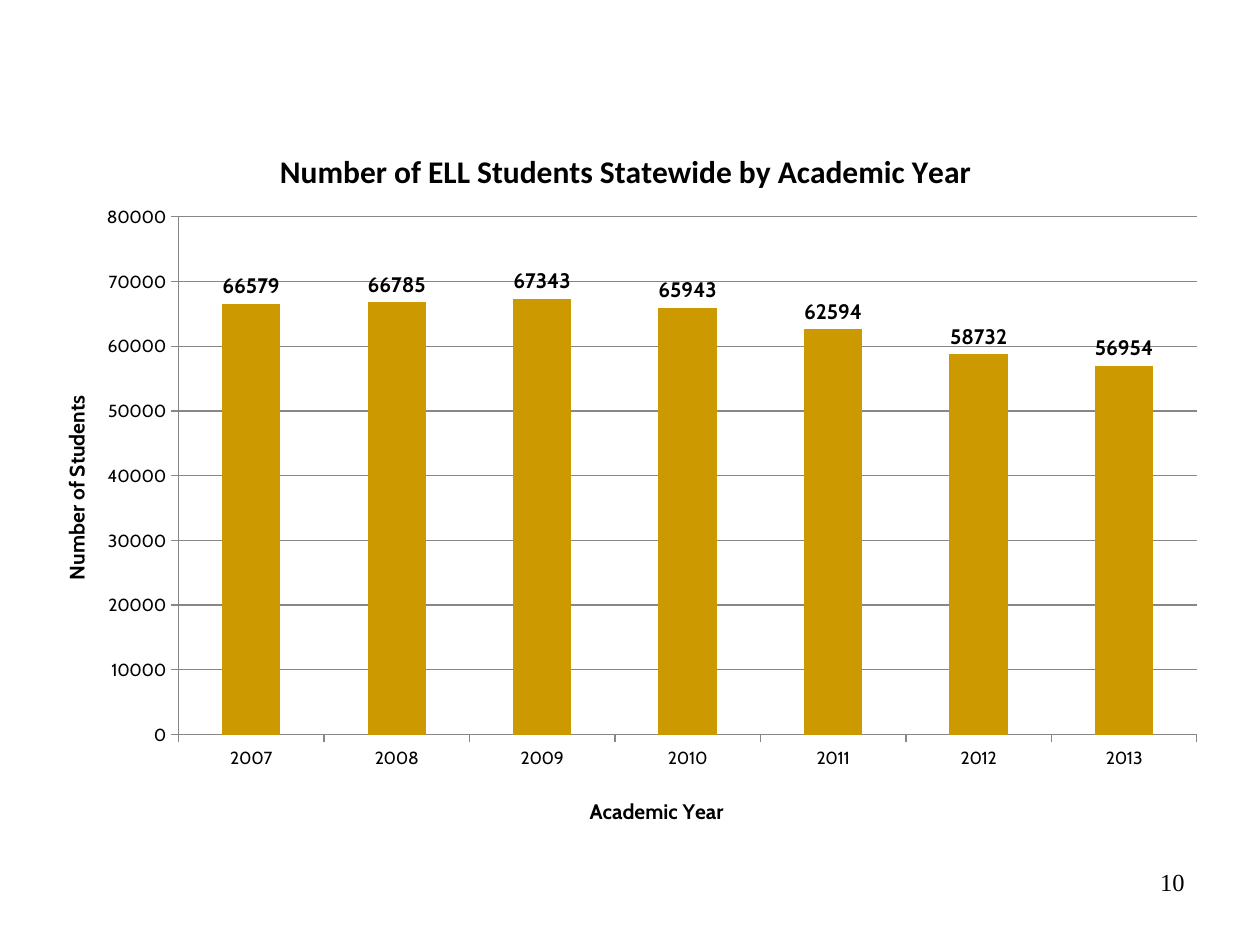
from dataclasses import dataclass

from lxml import etree
from pptx import Presentation, util as u
from pptx.chart.data import CategoryChartData
from pptx.dml.color import RGBColor
from pptx.enum import chart as ch, text
from pptx.oxml import ns

COLORS = {"text": "000000", "bar": "CC9900", "line": "878787"}
FONT = "Cabin"
WIDTH, HEIGHT = 10, 7.5
STUDENTS = {
    "2007": 66579, "2008": 66785, "2009": 67343, "2010": 65943,
    "2011": 62594, "2012": 58732, "2013": 56954,
}


@dataclass(frozen=True)
class Caption:
    """A chart or axis title; x and y are shares of the chart's size."""
    words: str
    size: float
    font: str
    x: float
    y: float


TITLE = Caption("Number of ELL Students Statewide by Academic Year", 18, "Calibri", 0.21, 0.04)
YEAR_TITLE = Caption("Academic Year", 12, FONT, 0.47, 0.93)
COUNT_TITLE = Caption("Number of Students", 12, FONT, 0.03, 0.38)


def rgb(name: str) -> RGBColor:
    return RGBColor.from_string(COLORS[name])


def style_font(font, size: float, name: str = FONT, bold: bool = False) -> None:
    font.size, font.name, font.bold = u.Pt(size), name, bold
    font.color.rgb = rgb("text")


def style_line(line) -> None:
    line.color.rgb = rgb("line")
    line.width = u.Pt(0.75)


def make_layout(**values) -> etree._Element:
    """Return a manual c:layout with the given settings."""
    layout = etree.Element(ns.qn("c:layout"))
    manual = etree.SubElement(layout, ns.qn("c:manualLayout"))
    for tag, value in values.items():
        etree.SubElement(manual, ns.qn(f"c:{tag}")).set("val", str(value))
    return layout


def add_caption(owner, caption: Caption) -> None:
    """Write and place the title of a chart or an axis."""
    owner.has_title = True
    title = owner.chart_title if hasattr(owner, "chart_title") else owner.axis_title
    r = title.text_frame.paragraphs[0].add_run()
    r.text = caption.words
    style_font(r.font, caption.size, caption.font, bold=True)
    el = title._element
    for old in el.findall(ns.qn("c:layout")):
        el.remove(old)
    el.find(ns.qn("c:tx")).addnext(
        make_layout(xMode="edge", yMode="edge", x=caption.x, y=caption.y))


def style_axis(axis, caption: Caption) -> None:
    axis.major_tick_mark = ch.XL_TICK_MARK.OUTSIDE
    axis.minor_tick_mark = ch.XL_TICK_MARK.NONE
    style_font(axis.tick_labels.font, 10)
    style_line(axis.format.line)
    add_caption(axis, caption)


def add_student_chart(s) -> None:
    data = CategoryChartData()
    data.categories = list(STUDENTS)
    data.add_series("Series 1", list(STUDENTS.values()))
    chart = s.shapes.add_chart(
        ch.XL_CHART_TYPE.COLUMN_CLUSTERED, u.Inches(0.18), u.Inches(0.91),
        u.Inches(9.51), u.Inches(5.79), data).chart
    chart.has_legend = False
    style_font(chart.font, 10)
    add_caption(chart, TITLE)

    style_axis(chart.category_axis, YEAR_TITLE)
    values = chart.value_axis
    style_axis(values, COUNT_TITLE)
    values.minimum_scale, values.maximum_scale, values.major_unit = 0, 80000, 10000
    values.has_major_gridlines = True
    style_line(values.major_gridlines.format.line)

    plot = chart.plots[0]
    plot.gap_width = 150
    plot.vary_by_categories = False
    bars = plot.series[0]
    bars.format.fill.solid()
    bars.format.fill.fore_color.rgb = rgb("bar")
    labels = bars.data_labels
    labels.show_value = True
    labels.position = ch.XL_LABEL_POSITION.OUTSIDE_END
    style_font(labels.font, 12, bold=True)

    area = chart._chartSpace.chart.plotArea
    for old in area.findall(ns.qn("c:layout")):
        area.remove(old)
    area.insert(0, make_layout(layoutTarget="inner", xMode="edge", yMode="edge",
                               x=0.13, y=0.14, w=0.85, h=0.71))


def add_page_number(s, number: str) -> None:
    box = s.shapes.add_textbox(u.Inches(7.17), u.Inches(6.83), u.Inches(2.33), u.Inches(0.52))
    tf = box.text_frame
    tf.word_wrap = True
    p = tf.paragraphs[0]
    p.alignment = text.PP_ALIGN.RIGHT
    r = p.add_run()
    r.text = number
    style_font(r.font, 14, "Times New Roman")


def main() -> None:
    prs = Presentation()
    prs.slide_width, prs.slide_height = u.Inches(WIDTH), u.Inches(HEIGHT)
    s = prs.slides.add_slide(prs.slide_layouts.get_by_name("Blank"))
    add_student_chart(s)
    add_page_number(s, "10")
    prs.save("out.pptx")


if __name__ == "__main__":
    main()
